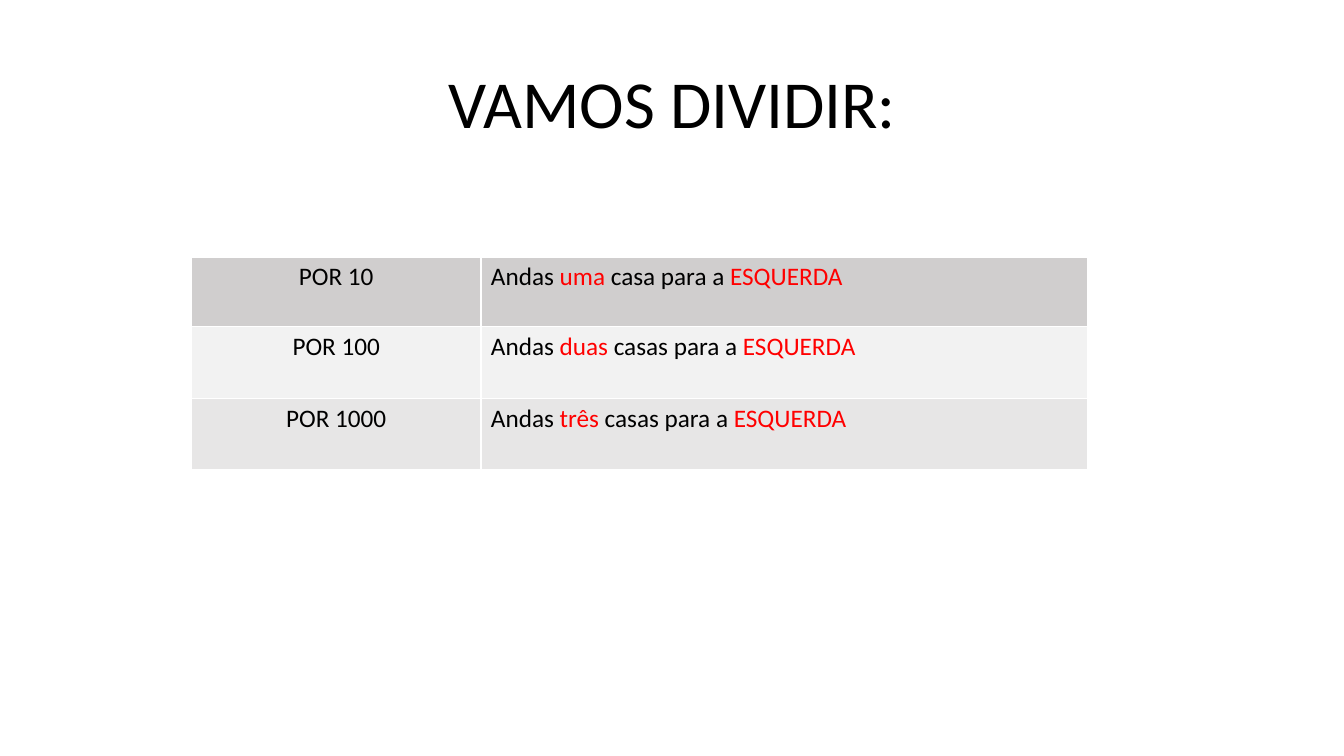
import pptx
import pptx.dml.color
import pptx.enum.text
import pptx.oxml
import pptx.oxml.ns
import pptx.util

Inches = pptx.util.Inches
Pt = pptx.util.Pt
ALIGN = pptx.enum.text.PP_ALIGN

THEME = {
    "font": "Calibri", "title_size": 48, "table_size": 18,
    "text": "000000", "accent": "FF0000", "white": "FFFFFF",
    "rows": ["D0CECE", "F2F2F2", "E7E6E6"],
}


def add_run(paragraph, text, size, color):
    run = paragraph.add_run()
    run.text = text
    for name, value in {"name": THEME["font"], "size": Pt(size)}.items():
        setattr(run.font, name, value)
    run.font.color.rgb = pptx.dml.color.RGBColor.from_string(color)


def style_cell(cell, fill, widths):
    # Borders come before the fill in the cell properties
    properties = cell._tc.get_or_add_tcPr()
    for side, width in zip("LRTB", widths):
        properties.append(pptx.oxml.parse_xml(
            f'<a:ln{side} {pptx.oxml.ns.nsdecls("a")} w="{Pt(width)}"><a:solidFill>'
            f'<a:srgbClr val="{THEME["white"]}"/></a:solidFill></a:ln{side}>'))
    cell.fill.solid()
    cell.fill.fore_color.rgb = pptx.dml.color.RGBColor.from_string(fill)


presentation = pptx.Presentation()
presentation.slide_width = Inches(13.33)
presentation.slide_height = Inches(7.5)
slide = presentation.slides.add_slide(presentation.slide_layouts[6])

# Title
title = slide.shapes.add_textbox(Inches(0.92), Inches(0.65), Inches(11.5), Inches(6.1))
title.text_frame.word_wrap = True
paragraph = title.text_frame.paragraphs[0]
title_format = {"alignment": ALIGN.CENTER, "line_spacing": 0.9, "space_before": Pt(10)}
for name, value in title_format.items():
    setattr(paragraph, name, value)
add_run(paragraph, "VAMOS DIVIDIR:", THEME["title_size"], THEME["text"])

# Table with an empty white header row
rules = [("POR 10", "uma", "casa"), ("POR 100", "duas", "casas"), ("POR 1000", "três", "casas")]
table = slide.shapes.add_table(
    len(rules) + 1, 2, Inches(1.9), Inches(2.13), Inches(8.89), Inches(2.51)).table
for column, width in zip(table.columns, [2.87, 6.02]):
    column.width = Inches(width)
for row, height in zip(table.rows, [0.41, 0.7, 0.71, 0.71]):
    row.height = Inches(height)
for cell in table.rows[0].cells:
    style_cell(cell, THEME["white"], [1, 1, 1, 3])

# Division rules
for row_index, (divisor, count, noun) in enumerate(rules, start=1):
    divisor_cell, move_cell = table.rows[row_index].cells
    for cell in (divisor_cell, move_cell):
        style_cell(cell, THEME["rows"][row_index - 1], [1, 1, 3 if row_index == 1 else 1, 1])
    paragraph = divisor_cell.text_frame.paragraphs[0]
    paragraph.alignment = ALIGN.CENTER
    add_run(paragraph, divisor, THEME["table_size"], THEME["text"])
    paragraph = move_cell.text_frame.paragraphs[0]
    for text, color in [("Andas ", "text"), (count, "accent"),
                        (f" {noun} para a ", "text"), ("ESQUERDA", "accent")]:
        add_run(paragraph, text, THEME["table_size"], THEME[color])

presentation.save("out.pptx")
